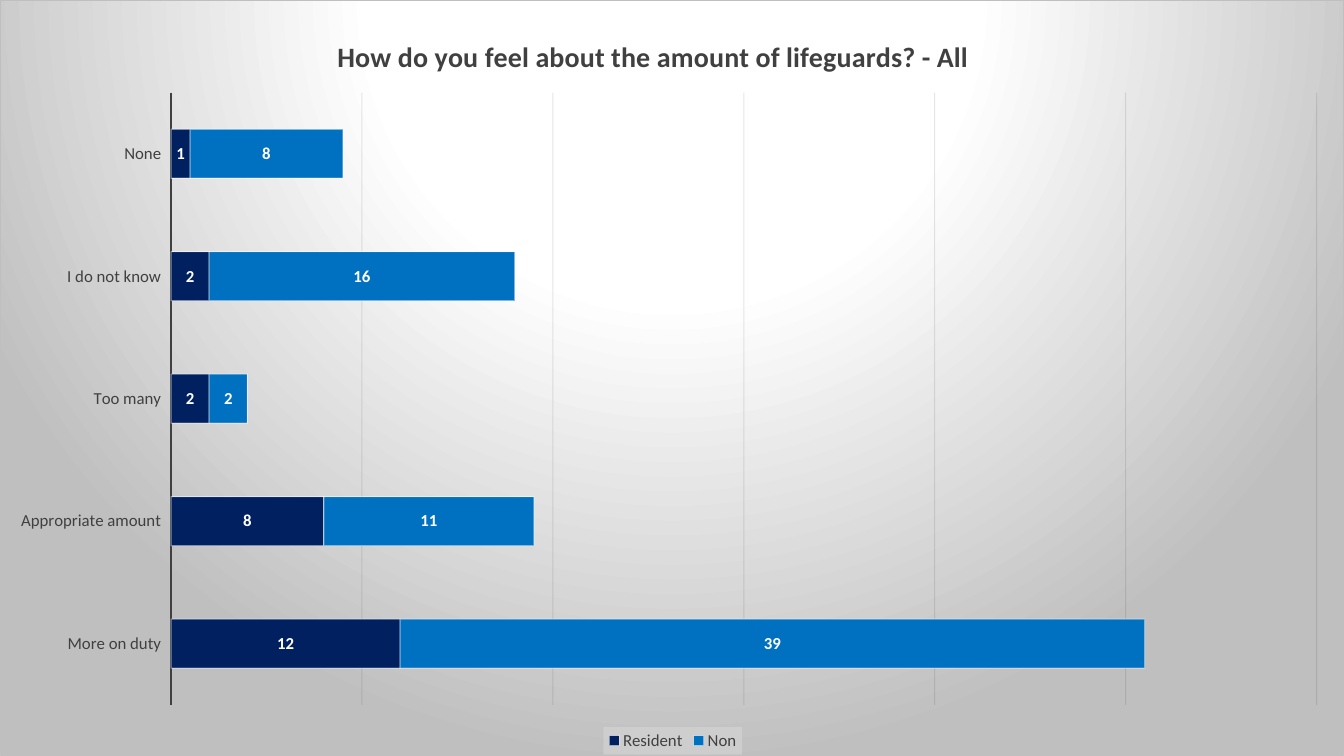
from dataclasses import dataclass
from lxml.etree import SubElement
from pptx import Presentation
from pptx.chart.data import CategoryChartData
from pptx.dml.color import RGBColor
from pptx.enum.chart import (XL_CHART_TYPE, XL_LABEL_POSITION,
                             XL_LEGEND_POSITION, XL_TICK_LABEL_POSITION,
                             XL_TICK_MARK)
from pptx.oxml import parse_xml
from pptx.oxml.ns import nsdecls, qn
from pptx.util import Inches, Pt


@dataclass(frozen=True)
class Theme:
    font: str = "Calibri"
    ink: str = "404040"
    white: str = "FFFFFF"
    grey: str = "BFBFBF"
    grid: str = "0D0D0D"
    key: str = "D9D9D9"
    navy: str = "002060"
    blue: str = "0070C0"
    title: int = 20
    body: int = 12
    thin: float = 0.75
    thick: float = 1.5


THEME = Theme()
WIDE, HIGH = 13.33, 7.5
CATS = ["More on duty", "Appropriate amount", "Too many", "I do not know", "None"]
DATA = [
    ("Resident", [12, 8, 2, 2, 1], THEME.navy),
    ("Non", [39, 11, 2, 16, 8], THEME.blue),
]


def style(font, size=THEME.body, color=THEME.ink, bold=False):
    font.name = THEME.font
    font.size = Pt(size)
    font.bold = bold
    font.color.rgb = RGBColor.from_string(color)


def write(frame, text, **look):
    run = frame.paragraphs[0].add_run()
    run.text = text
    style(run.font, **look)


def stroke(line, color, width):
    line.color.rgb = RGBColor.from_string(color)
    line.width = Pt(width)


def fade(root, share):
    for line in root.iter(qn("a:ln")):
        for color in line.iter(qn("a:srgbClr")):
            SubElement(color, qn("a:alpha"), val=str(share * 1000))


def place(node, index, **spot):
    old = node.find(qn("c:layout"))
    if old is not None:
        node.remove(old)
    layout = parse_xml(f"<c:layout {nsdecls('c')}><c:manualLayout/></c:layout>")
    for tag, val in spot.items():
        SubElement(layout[0], qn(f"c:{tag}"), val=str(val))
    node.insert(index, layout)


def paint(node, body):
    shape = parse_xml(f"<c:spPr {nsdecls('c', 'a')}>{body}</c:spPr>")
    node.find(qn("c:txPr")).addprevious(shape)


def glow():
    stops = [(0, THEME.white), (39, THEME.white), (100, THEME.grey)]
    marks = "".join(
        f'<a:gs pos="{pos * 1000}"><a:srgbClr val="{color}"/></a:gs>'
        for pos, color in stops)
    return (f'<a:gradFill><a:gsLst>{marks}</a:gsLst><a:path path="circle">'
            '<a:fillToRect l="50000" t="-80000" r="50000" b="180000"/>'
            f'</a:path></a:gradFill><a:ln w="{Pt(THEME.thin)}"><a:solidFill>'
            f'<a:srgbClr val="{THEME.grey}"/></a:solidFill></a:ln>')


def add_bars(slide):
    data = CategoryChartData()
    data.categories = CATS
    for name, vals, _ in DATA:
        data.add_series(name, vals)
    chart = slide.shapes.add_chart(
        XL_CHART_TYPE.BAR_STACKED, 0, 0, Inches(WIDE), Inches(HIGH), data).chart
    style(chart.font)
    plot = chart.plots[0]
    plot.gap_width, plot.overlap = 150, 100
    plot.vary_by_categories = False
    for series, (_, _, color) in zip(plot.series, DATA):
        series.invert_if_negative = False
        series.format.fill.solid()
        series.format.fill.fore_color.rgb = RGBColor.from_string(color)
        stroke(series.format.line, THEME.white, THEME.thin)
        labels = series.data_labels
        labels.show_value = True
        labels.position = XL_LABEL_POSITION.CENTER
        style(labels.font, color=THEME.white, bold=True)
    for series in chart.element.iter(qn("c:ser")):
        fade(series, 50)
    return chart


def set_axes(chart):
    cats, vals = chart.category_axis, chart.value_axis
    cats.major_tick_mark = cats.minor_tick_mark = XL_TICK_MARK.NONE
    cats.tick_label_position = XL_TICK_LABEL_POSITION.LOW
    style(cats.tick_labels.font)
    stroke(cats.format.line, THEME.ink, THEME.thick)
    vals.minimum_scale, vals.maximum_scale, vals.major_unit = 0, 60, 10
    vals.has_major_gridlines = True
    stroke(vals.major_gridlines.format.line, THEME.grid, THEME.thin)
    vals.visible = False
    for grid in chart.element.iter(qn("c:majorGridlines")):
        fade(grid, 10)


def set_frame(chart):
    chart.has_title = True
    write(chart.chart_title.text_frame,
          "How do you feel about the amount of lifeguards? - All",
          size=THEME.title, bold=True)
    chart.has_legend = True
    chart.legend.position = XL_LEGEND_POSITION.BOTTOM
    chart.legend.include_in_layout = False
    style(chart.legend.font)

    root = chart.element
    body = root.find(qn("c:chart"))
    key = body.find(qn("c:legend"))
    place(body.find(qn("c:title")), 1, xMode="edge", yMode="edge", x=0.247, y=0.042)
    place(body.find(qn("c:plotArea")), 0, layoutTarget="inner", xMode="edge",
          yMode="edge", x=0.127, y=0.122, w=0.853, h=0.811)
    place(key, 1, xMode="edge", yMode="edge", x=0.449, y=0.962, w=0.103, h=0.037)
    paint(key, f'<a:solidFill><a:srgbClr val="{THEME.key}">'
               '<a:alpha val="50000"/></a:srgbClr></a:solidFill>')
    paint(root, glow())


def main():
    deck = Presentation()
    deck.slide_width, deck.slide_height = Inches(WIDE), Inches(HIGH)
    slide = deck.slides.add_slide(deck.slide_layouts[6])
    chart = add_bars(slide)
    set_axes(chart)
    set_frame(chart)
    deck.save("out.pptx")


if __name__ == "__main__":
    main()
